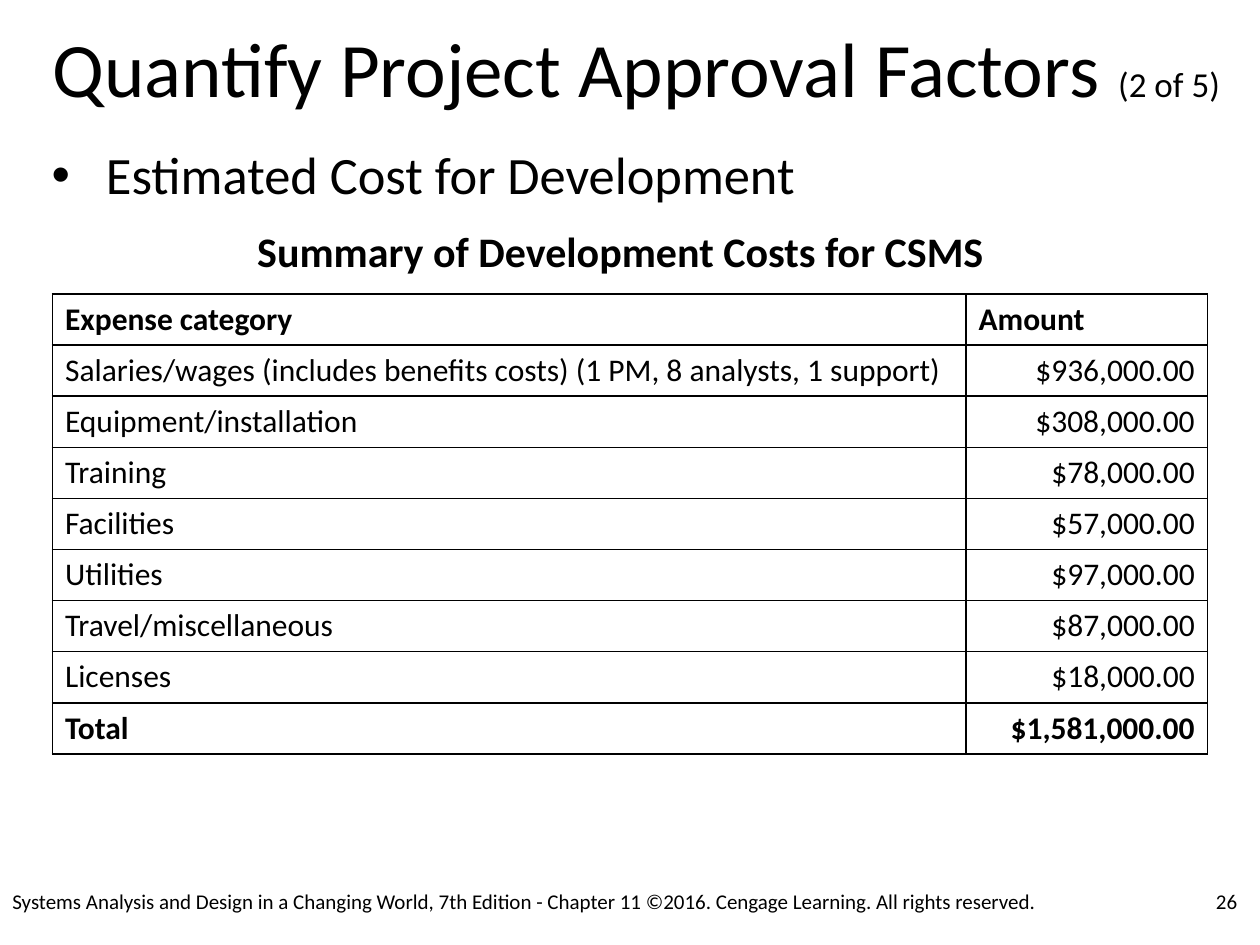
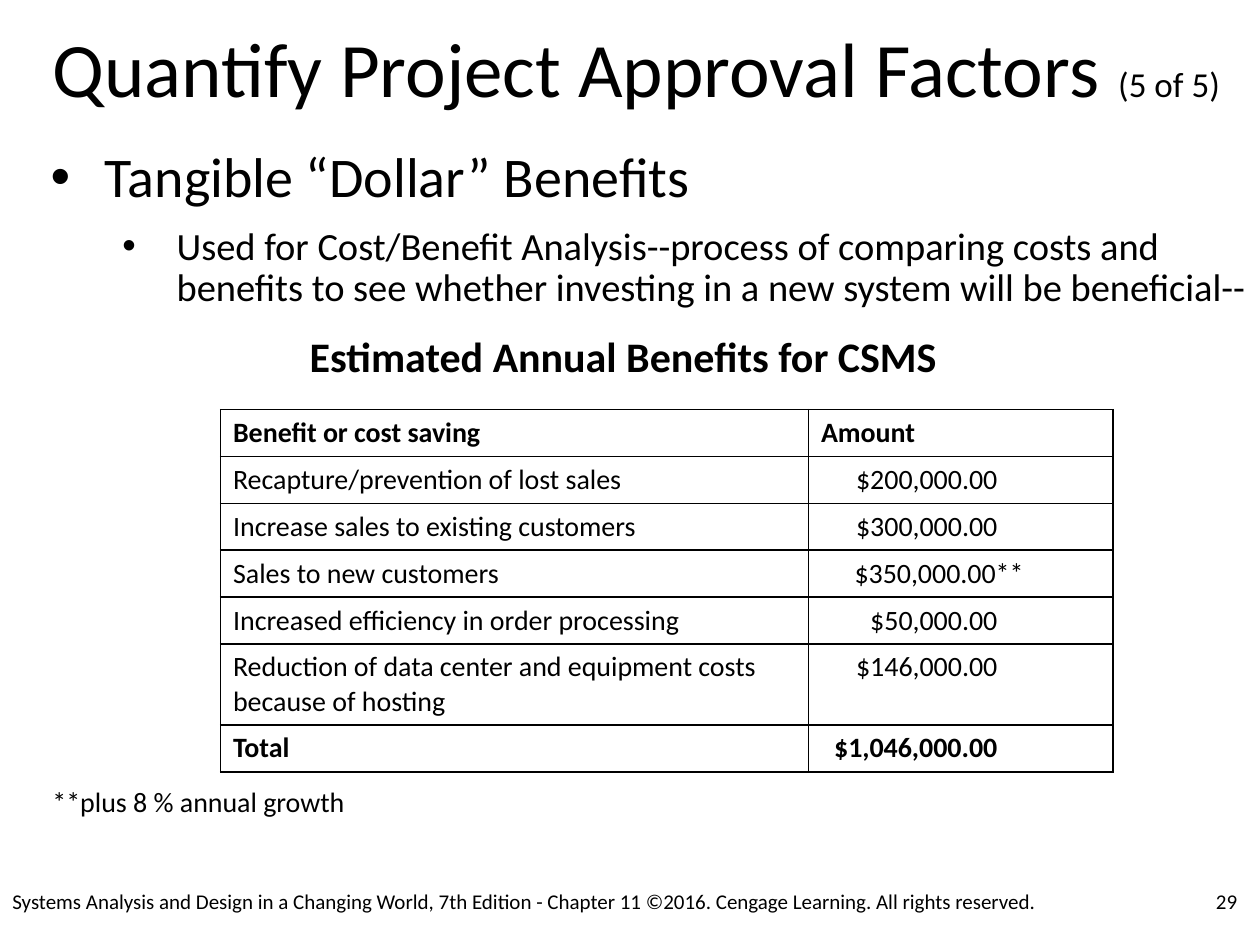
import lxml.etree
import pptx
import pptx.dml.color
import pptx.enum.text
import pptx.oxml.ns
import pptx.util

Pt = pptx.util.Pt
ALIGN = pptx.enum.text.PP_ALIGN
ANCHOR = pptx.enum.text.MSO_ANCHOR
COLORS = {"ink": "000000", "paper": "FFFFFF"}
FONT = "Calibri"
PADDING = {"left": 7.2, "top": 3.6, "right": 7.2, "bottom": 3.6}
NO_PADDING = dict.fromkeys(PADDING, 0)

SLIDE_SIZE = (720, 540)
TITLE_BOX = (30, 18, 678, 50)
FOOTER_BOX = (0, 500.4, 714, 28.8)
TITLE = "Quantify Project Approval Factors "
COPYRIGHT = ("Systems Analysis and Design in a Changing World, 7th Edition - Chapter 11 "
             "©2016. Cengage Learning. All rights reserved.")

COST_ROWS = [
    ("Expense category", "Amount"),
    ("Salaries/wages (includes benefits costs) (1 PM, 8 analysts, 1 support)", "$936,000.00"),
    ("Equipment/installation", "$308,000.00"),
    ("Training", "$78,000.00"),
    ("Facilities", "$57,000.00"),
    ("Utilities", "$97,000.00"),
    ("Travel/miscellaneous", "$87,000.00"),
    ("Licenses", "$18,000.00"),
    ("Total", "$1,581,000.00"),
]
BENEFIT_ROWS = [
    ("Benefit or cost saving", "Amount"),
    ("Recapture/prevention of lost sales", "$200,000.00"),
    ("Increase sales to existing customers", "$300,000.00"),
    ("Sales to new customers", "$350,000.00**"),
    ("Increased efficiency in order processing", "$50,000.00"),
    ("Reduction of data center and equipment costs because of hosting", "$146,000.00"),
    ("Total", "$1,046,000.00"),
]


def color(name):
    return pptx.dml.color.RGBColor.from_string(COLORS[name])


def apply_format(target, values):
    for attribute, value in values.items():
        setattr(target, attribute, value)


def set_padding(target, padding):
    apply_format(target, {f"margin_{side}": Pt(gap) for side, gap in padding.items()})


def add_run(paragraph, text, size, bold=False):
    run = paragraph.add_run()
    run.text = text
    apply_format(run.font, {"name": FONT, "size": Pt(size), "bold": bold})
    run.font.color.rgb = color("ink")


def add_text_frame(slide, box, padding=NO_PADDING, anchor=ANCHOR.TOP):
    frame = slide.shapes.add_textbox(*map(Pt, box)).text_frame
    apply_format(frame, {"word_wrap": True, "vertical_anchor": anchor})
    set_padding(frame, padding)
    return frame


def add_title(slide, box, part):
    paragraph = add_text_frame(slide, box).paragraphs[0]
    paragraph.line_spacing = 0.9
    add_run(paragraph, TITLE, 44)
    add_run(paragraph, part, 20)


def add_bullets(slide, box, bullets):
    frame = add_text_frame(slide, box)
    for index, (text, size, level, indent) in enumerate(bullets):
        paragraph = frame.add_paragraph() if index else frame.paragraphs[0]
        properties = paragraph._p.get_or_add_pPr()
        properties.set("marL", str(Pt(indent)))
        properties.set("indent", str(Pt(-31)))
        bullet_font = lxml.etree.SubElement(properties, pptx.oxml.ns.qn("a:buFont"))
        bullet_font.set("typeface", "Arial")
        lxml.etree.SubElement(properties, pptx.oxml.ns.qn("a:buChar")).set("char", "•")
        apply_format(paragraph, {"level": level, "line_spacing": 0.9,
                                 "space_before": Pt(10 if index else 0)})
        add_run(paragraph, text, size)


def add_line(slide, box, text, size, bold=False):
    paragraph = add_text_frame(slide, box).paragraphs[0]
    paragraph.line_spacing = 0.9
    add_run(paragraph, text, size, bold)


def add_borders(cell):
    properties = cell._tc.get_or_add_tcPr()
    for side in ("lnL", "lnR", "lnT", "lnB"):
        border = lxml.etree.SubElement(properties, pptx.oxml.ns.qn(f"a:{side}"))
        border.set("w", str(Pt(1)))
        fill = lxml.etree.SubElement(border, pptx.oxml.ns.qn("a:solidFill"))
        ink = lxml.etree.SubElement(fill, pptx.oxml.ns.qn("a:srgbClr"))
        ink.set("val", COLORS["ink"])


def add_amount_table(slide, box, rows, widths, heights, size, amount_gap=7.2):
    table = slide.shapes.add_table(len(rows), len(widths), *map(Pt, box)).table
    apply_format(table, {"first_row": False, "horz_banding": False})
    for column, width in zip(table.columns, widths):
        column.width = Pt(width)
    for row_index, (row, height) in enumerate(zip(rows, heights)):
        table.rows[row_index].height = Pt(height)
        is_header = row_index == 0
        is_bold = is_header or row_index == len(rows) - 1
        for column_index, text in enumerate(row):
            cell = table.cell(row_index, column_index)
            add_borders(cell)
            cell.fill.solid()
            cell.fill.fore_color.rgb = color("paper")
            paragraph = cell.text_frame.paragraphs[0]
            padding = dict(PADDING)
            if column_index and not is_header:
                paragraph.alignment = ALIGN.RIGHT
                padding["right"] = amount_gap - (15 if text.endswith("**") else 0)
            set_padding(cell, padding)
            add_run(paragraph, text, size, is_bold)


def add_footer(slide, box, number):
    left, top, width, height = box
    number_width = 60
    parts = [
        (str(number), left + width - number_width, number_width, ALIGN.RIGHT),
        (COPYRIGHT, left, 606, ALIGN.LEFT),
    ]
    for text, part_left, part_width, alignment in parts:
        frame = add_text_frame(slide, (part_left, top, part_width, height),
                               PADDING, ANCHOR.MIDDLE)
        frame.paragraphs[0].alignment = alignment
        add_run(frame.paragraphs[0], text, 12)


def add_base_slide(deck, part, number):
    slide = deck.slides.add_slide(deck.slide_layouts[6])
    slide.background.fill.solid()
    slide.background.fill.fore_color.rgb = color("paper")
    add_title(slide, TITLE_BOX, part)
    add_footer(slide, FOOTER_BOX, number)
    return slide


def add_cost_slide(deck):
    slide = add_base_slide(deck, "(2 of 5)", 26)
    add_bullets(slide, (29.5, 85, 660, 32.4),
                [("Estimated Cost for Development", 30, 0, 31)])
    add_line(slide, (147, 132, 426, 26), "Summary of Development Costs for CSMS", 24, True)
    add_amount_table(slide, (30, 168, 660, 262.8), COST_ROWS, (522, 138),
                     [29.2] * len(COST_ROWS), 18)


def add_benefit_slide(deck):
    slide = add_base_slide(deck, "(5 of 5)", 29)
    add_bullets(slide, (29, 85, 690, 93), [
        ("Tangible “Dollar” Benefits", 32, 0, 31),
        ("Used for Cost/Benefit Analysis--process of comparing costs and benefits "
         "to see whether investing in a new system will be beneficial--", 22, 1, 72),
    ])
    add_line(slide, (177, 192, 366, 26), "Estimated Annual Benefits for CSMS", 24, True)
    heights = [26.8] * len(BENEFIT_ROWS)
    heights[-2] = 46.3
    add_amount_table(slide, (126, 234, 510, sum(heights)), BENEFIT_ROWS, (336, 174),
                     heights, 16, 66)
    add_line(slide, (30, 450.5, 168, 17.3), "**plus 8 % annual growth", 16)


def main():
    deck = pptx.Presentation()
    deck.slide_width, deck.slide_height = map(Pt, SLIDE_SIZE)
    add_cost_slide(deck)
    add_benefit_slide(deck)
    deck.save("out.pptx")


if __name__ == "__main__":
    main()
